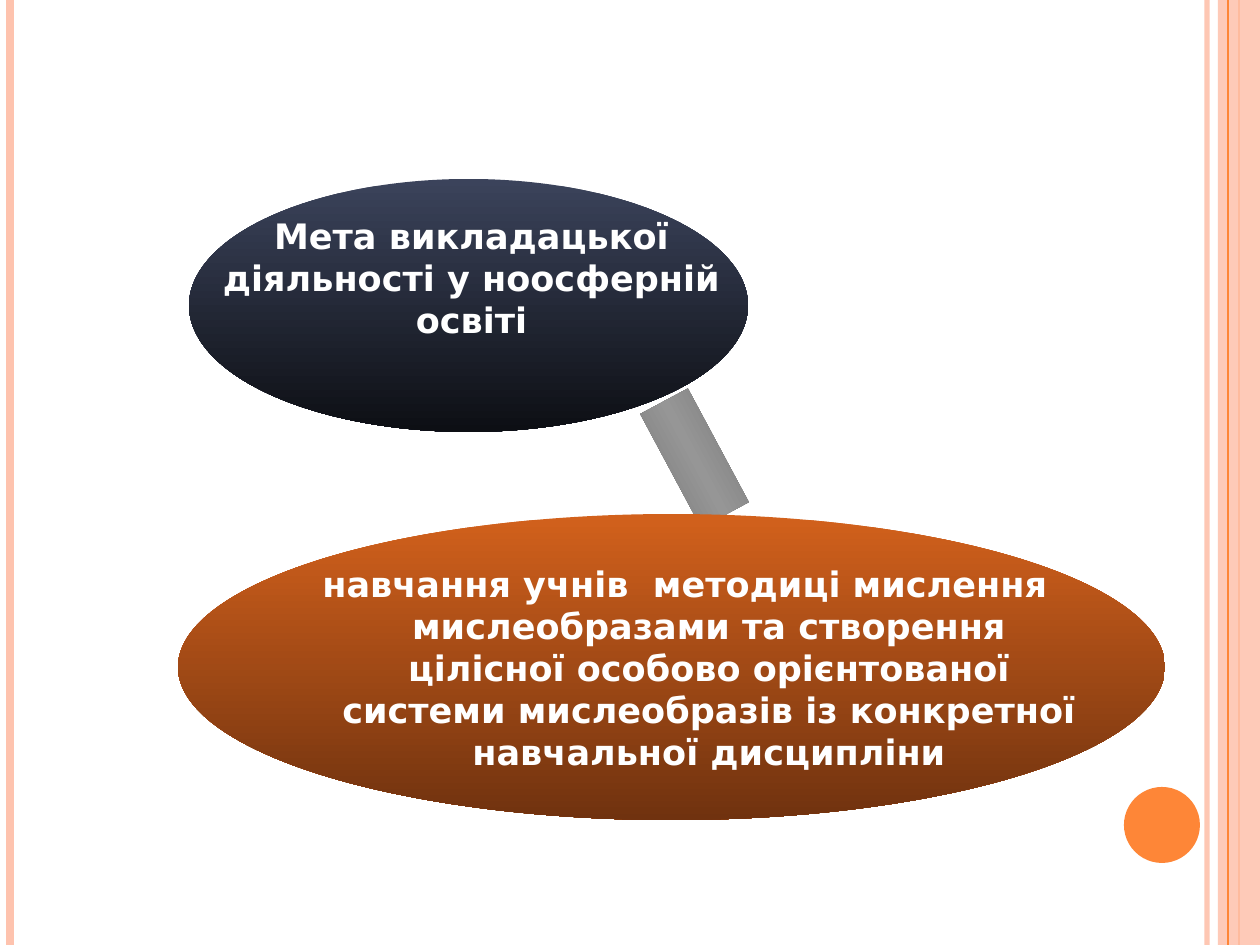
"""Build a slide linking the goal of teaching to its description with two gradient ovals."""
from copy import deepcopy
from dataclasses import dataclass

from lxml import etree
from pptx import Presentation
from pptx import util as u
from pptx.dml.color import RGBColor
from pptx.enum import shapes, text
from pptx.oxml.ns import qn

SCALE = 914400 / 126
WIDTH, HEIGHT = 1260, 945
COLORS = {
    "white": "FFFFFF",
    "pink": "FEC3AE",
    "orange": "FE8637",
    "navy": "3B435B",
    "night": "0D0F14",
    "rust": "D2611C",
    "brown": "70320F",
    "steel": "757575",
    "silver": "969696",
}


@dataclass(frozen=True)
class Stripe:
    x: int
    color: str
    weight: float
    opacity: int = 100


@dataclass(frozen=True)
class Figure:
    preset: shapes.MSO_SHAPE
    frame: tuple[int, int, int, int]
    colors: tuple[str, ...]
    rotation: float = 0
    opacity: int = 100


@dataclass(frozen=True)
class Caption:
    words: str
    frame: tuple[int, int, int, int]
    hanging: int = 0


OVAL, BAR = shapes.MSO_SHAPE.OVAL, shapes.MSO_SHAPE.RECTANGLE
EDGE_STRIPES = [
    Stripe(1207, "pink", 3, 93),
    Stripe(10, "pink", 4.5),
    Stripe(1239, "orange", 1.5),
]
EDGE_BAND = Figure(BAR, (1218, 0, 42, HEIGHT), ("pink",), opacity=87)
THIN_STRIPE = Stripe(1228, "orange", 0.75)
FIGURES = [
    Figure(OVAL, (1124, 787, 76, 76), ("orange",)),
    Figure(BAR, (630, 431, 129, 54), ("steel", "silver", "steel"), 241.8),
    Figure(OVAL, (189, 179, 559, 253), ("navy", "night")),
    Figure(OVAL, (178, 514, 987, 306), ("rust", "brown")),
]
CAPTIONS = [
    Caption("Мета викладацької діяльності у ноосферній освіті", (198, 208, 547, 140)),
    Caption(
        "навчання учнів  методиці мислення мислеобразами та створення цілісної "
        "особово орієнтованої системи мислеобразів із конкретної навчальної дисципліни",
        (273, 556, 824, 224),
        48,
    ),
]


def px(length: int) -> u.Emu:
    """Turn pixels into EMU."""
    return u.Emu(round(length * SCALE))


def rgb(name: str) -> RGBColor:
    """Look up a named colour."""
    return RGBColor.from_string(COLORS[name])


def set_opacity(shape, percent: int) -> None:
    """Make the first solid colour of a shape partly transparent."""
    if percent < 100:
        color = next(shape._element.spPr.iter(qn("a:srgbClr")))
        etree.SubElement(color, qn("a:alpha"), val=str(percent * 1000))


def draw_stripe(page, stripe: Stripe) -> None:
    """Draw a vertical line over the full slide height."""
    line = page.shapes.add_connector(
        shapes.MSO_CONNECTOR.STRAIGHT, px(stripe.x), 0, px(stripe.x), px(HEIGHT)
    )
    line.line.color.rgb = rgb(stripe.color)
    line.line.width = u.Pt(stripe.weight)
    set_opacity(line, stripe.opacity)
    etree.SubElement(line._element.spPr, qn("a:effectLst"))


def fill_gradient(fill, colors: tuple[str, ...]) -> None:
    """Fill from top to bottom with evenly spaced colours."""
    fill.gradient()
    fill.gradient_angle = 270
    last = fill.gradient_stops[-1]._gs
    for _ in colors[2:]:
        last.addprevious(deepcopy(last))
    fill_stops = list(last.getparent())
    for index, (element, name) in enumerate(zip(fill_stops, colors)):
        element.set("pos", str(100000 * index // (len(colors) - 1)))
        for child in list(element):
            element.remove(child)
        etree.SubElement(element, qn("a:srgbClr"), val=COLORS[name])


def draw_figure(page, figure: Figure) -> None:
    """Draw a borderless shape with a solid or gradient fill."""
    shape = page.shapes.add_shape(figure.preset, *map(px, figure.frame))
    shape.shadow.inherit = False
    shape.rotation = figure.rotation
    shape.line.fill.background()
    if len(figure.colors) > 1:
        fill_gradient(shape.fill, figure.colors)
    else:
        shape.fill.solid()
        shape.fill.fore_color.rgb = rgb(figure.colors[0])
        set_opacity(shape, figure.opacity)


def write(
    page,
    words: str,
    frame: tuple[int, int, int, int],
    *,
    hanging: int = 0,
    size: float = 20,
    color: str = "white",
    font: str = "DejaVu Sans",
    bold: bool = True,
) -> None:
    """Write a centred paragraph in a wrapping text box."""
    box = page.shapes.add_textbox(*map(px, frame))
    box.text_frame.word_wrap = True
    para = box.text_frame.paragraphs[0]
    para.alignment = text.PP_ALIGN.CENTER
    if hanging:
        properties = para._p.get_or_add_pPr()
        properties.set("marL", str(px(hanging)))
        properties.set("indent", str(-px(hanging)))
    span = para.add_run()
    span.text = words
    span.font.size = u.Pt(size)
    span.font.name = font
    span.font.bold = bold
    span.font.color.rgb = rgb(color)


def main() -> None:
    """Build and save the deck."""
    deck = Presentation()
    deck.slide_width, deck.slide_height = px(WIDTH), px(HEIGHT)
    page = deck.slides.add_slide(deck.slide_layouts[6])
    for stripe in EDGE_STRIPES:
        draw_stripe(page, stripe)
    draw_figure(page, EDGE_BAND)
    draw_stripe(page, THIN_STRIPE)
    for figure in FIGURES:
        draw_figure(page, figure)
    for caption in CAPTIONS:
        write(page, caption.words, caption.frame, hanging=caption.hanging)
    deck.save("out.pptx")


if __name__ == "__main__":
    main()
